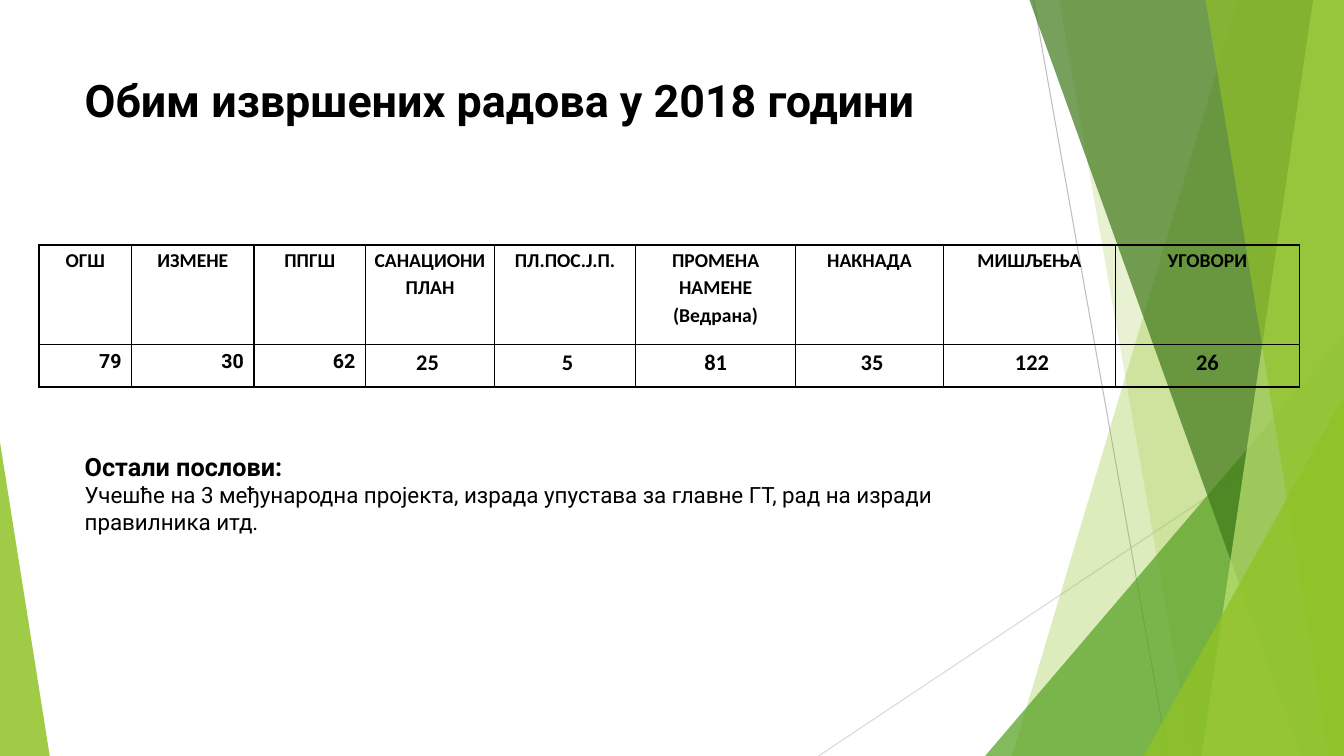
from dataclasses import dataclass

from lxml.etree import SubElement
from pptx import Presentation
from pptx.dml.color import RGBColor
from pptx.dml.fill import FillFormat
from pptx.enum.shapes import MSO_CONNECTOR as Connector, MSO_SHAPE as Preset
from pptx.enum.text import MSO_ANCHOR as Anchor, MSO_AUTO_SIZE as AutoSize, PP_ALIGN as Align
from pptx.oxml.ns import qn
from pptx.shapes.autoshape import Shape
from pptx.shapes.placeholder import SlidePlaceholder
from pptx.slide import Slide
from pptx.table import _Cell as Cell
from pptx.text.text import _Paragraph as Paragraph
from pptx.util import Inches, Pt

WIDTH = Inches(13.33)
HEIGHT = Inches(7.5)
BLACK = "000000"
LIME = "90C226"


@dataclass
class Ray:
    start: tuple[float, float]
    end: tuple[float, float]
    color: str


@dataclass
class Band:
    top_left: float
    bottom_left: float
    color: str
    opacity: int


@dataclass
class Triangle:
    left: float
    top: float
    width: float
    apex: float
    color: str
    opacity: int


@dataclass
class Column:
    width: float
    heading: str
    value: str
    is_plain: bool = False


RAYS = [
    Ray((76.9, 0), (86.9, 100), "BFBFBF"),
    Ray((100, 53.7), (60.9, 100), "D9D9D9"),
]
FACETS = [
    Band(92.1, 75.3, LIME, 30),
    Band(78.8, 88.7, LIME, 20),
    Triangle(73.3, 44.4, 26.7, 1, "54A021", 72),
    Band(76.6, 96.8, "3F7819", 70),
    Band(97.7, 89.4, "C0E474", 70),
    Band(89.7, 98.9, LIME, 65),
    Triangle(85.1, 52.4, 14.9, 1, LIME, 80),
    Triangle(0, 58.5, 3.7, 0, LIME, 85),
]
COLUMNS = [
    Column(6.9, "ОГШ", "79", True),
    Column(9.1, "ИЗМЕНЕ", "30", True),
    Column(8.3, "ППГШ", "62", True),
    Column(9.6, "САНАЦИОНИ\nПЛАН", "25 "),
    Column(10.5, "ПЛ.ПОС.Ј.П.", " 5"),
    Column(11.9, "ПРОМЕНА НАМЕНЕ\n(Ведрана)", "81"),
    Column(11, "НАКНАДА", " 35"),
    Column(12.8, "МИШЉЕЊА", " 122"),
    Column(13.7, "УГОВОРИ", "26"),
]
ROW_HEIGHTS = [13.2, 5.6]


def across(percent: float) -> int:
    return round(WIDTH * percent / 100)


def down(percent: float) -> int:
    return round(HEIGHT * percent / 100)


def rgb(color: str) -> RGBColor:
    return RGBColor.from_string(color)


def fill_with(fill: FillFormat, color: str, opacity: int) -> None:
    fill.solid()
    fill.fore_color.rgb = rgb(color)
    color_element = fill._xPr.find(qn("a:solidFill"))[0]
    SubElement(color_element, qn("a:alpha"), val=str(opacity * 1000))


def draw_ray(slide: Slide, ray: Ray) -> None:
    (x1, y1), (x2, y2) = ray.start, ray.end
    connector = slide.shapes.add_connector(
        Connector.STRAIGHT, across(x1), down(y1), across(x2), down(y2))
    connector.line.color.rgb = rgb(ray.color)
    connector.line.width = Pt(0.75)
    SubElement(connector._element.spPr, qn("a:effectLst"))


def add_band(slide: Slide, band: Band) -> Shape:
    builder = slide.shapes.build_freeform(across(band.top_left), 0)
    builder.add_line_segments([(WIDTH, 0), (WIDTH, HEIGHT), (across(band.bottom_left), HEIGHT)])
    return builder.convert_to_shape()


def add_triangle(slide: Slide, triangle: Triangle) -> Shape:
    shape = slide.shapes.add_shape(
        Preset.ISOSCELES_TRIANGLE, across(triangle.left), down(triangle.top),
        across(triangle.width), down(100 - triangle.top))
    shape.adjustments[0] = triangle.apex
    return shape


def draw_facet(slide: Slide, facet: Band | Triangle) -> None:
    shape = add_band(slide, facet) if isinstance(facet, Band) else add_triangle(slide, facet)
    shape.shadow.inherit = False
    shape.line.fill.background()
    fill_with(shape.fill, facet.color, facet.opacity)


def style_paragraph(paragraph: Paragraph, font: str, size: int, bold: bool, align: Align) -> None:
    paragraph.alignment = align
    paragraph.font.name = font
    paragraph.font.size = Pt(size)
    paragraph.font.bold = bold
    paragraph.font.color.rgb = rgb(BLACK)


def write_placeholder(placeholder: SlidePlaceholder, top: float, height: float,
                      lines: list[tuple[str, int, bool]]) -> None:
    placeholder.left, placeholder.top = across(5.55), down(top)
    placeholder.width, placeholder.height = across(70.2), down(height)
    frame = placeholder.text_frame
    frame.text = "\n".join(text for text, _, _ in lines)
    frame.vertical_anchor = Anchor.TOP
    frame.word_wrap = True
    frame.auto_size = AutoSize.NONE
    for paragraph, (_, size, bold) in zip(frame.paragraphs, lines):
        style_paragraph(paragraph, "Roboto", size, bold, Align.LEFT)
        paragraph.space_before = Pt(0)
        properties = paragraph._p.get_or_add_pPr()
        properties.set("marL", "0")
        properties.set("indent", "0")
        SubElement(properties, qn("a:buNone"))
        properties.append(properties.find(qn("a:defRPr")))


def border_cell(cell: Cell) -> None:
    properties = cell._tc.get_or_add_tcPr()
    for side in ("lnL", "lnR", "lnT", "lnB"):
        line = SubElement(properties, qn(f"a:{side}"), w=str(Pt(1)))
        SubElement(SubElement(line, qn("a:solidFill")), qn("a:srgbClr"), val=BLACK)
    cell.fill.background()


def write_cell(cell: Cell, text: str, size: int, is_plain: bool) -> None:
    border_cell(cell)
    cell.text = text
    if not is_plain:
        cell.margin_left = cell.margin_right = Inches(0.07)
        cell.margin_top = cell.margin_bottom = 0
    for paragraph in cell.text_frame.paragraphs:
        if is_plain:
            style_paragraph(paragraph, "Roboto", 14, True, Align.RIGHT)
        else:
            style_paragraph(paragraph, "Calibri", size, True, Align.CENTER)
            paragraph.line_spacing = 1.15


def draw_table(slide: Slide) -> None:
    total_width = sum(column.width for column in COLUMNS)
    table = slide.shapes.add_table(
        len(ROW_HEIGHTS), len(COLUMNS), across(2.9), down(32.4),
        across(total_width), down(sum(ROW_HEIGHTS))).table
    table.first_row = table.horz_banding = False
    for row, height in zip(table.rows, ROW_HEIGHTS):
        row.height = down(height)
    for index, column in enumerate(COLUMNS):
        table.columns[index].width = across(column.width)
        write_cell(table.cell(0, index), column.heading, 14, False)
        write_cell(table.cell(1, index), column.value, 16, column.is_plain)


def main() -> None:
    presentation = Presentation()
    presentation.slide_width, presentation.slide_height = WIDTH, HEIGHT
    slide = presentation.slides.add_slide(presentation.slide_layouts[1])
    for ray in RAYS:
        draw_ray(slide, ray)
    for facet in FACETS:
        draw_facet(slide, facet)
    title, body = slide.placeholders
    write_placeholder(title, 8.9, 12, [("Обим извршених радова у 2018 години", 32, True)])
    write_placeholder(body, 59, 41, [
        ("Oстали послови:", 18, True),
        ("Учешће на 3 међународна пројекта, израда упустава за главне ГТ, "
         "рад на изради правилника итд.", 16, False),
    ])
    draw_table(slide)
    presentation.save("out.pptx")


if __name__ == "__main__":
    main()
